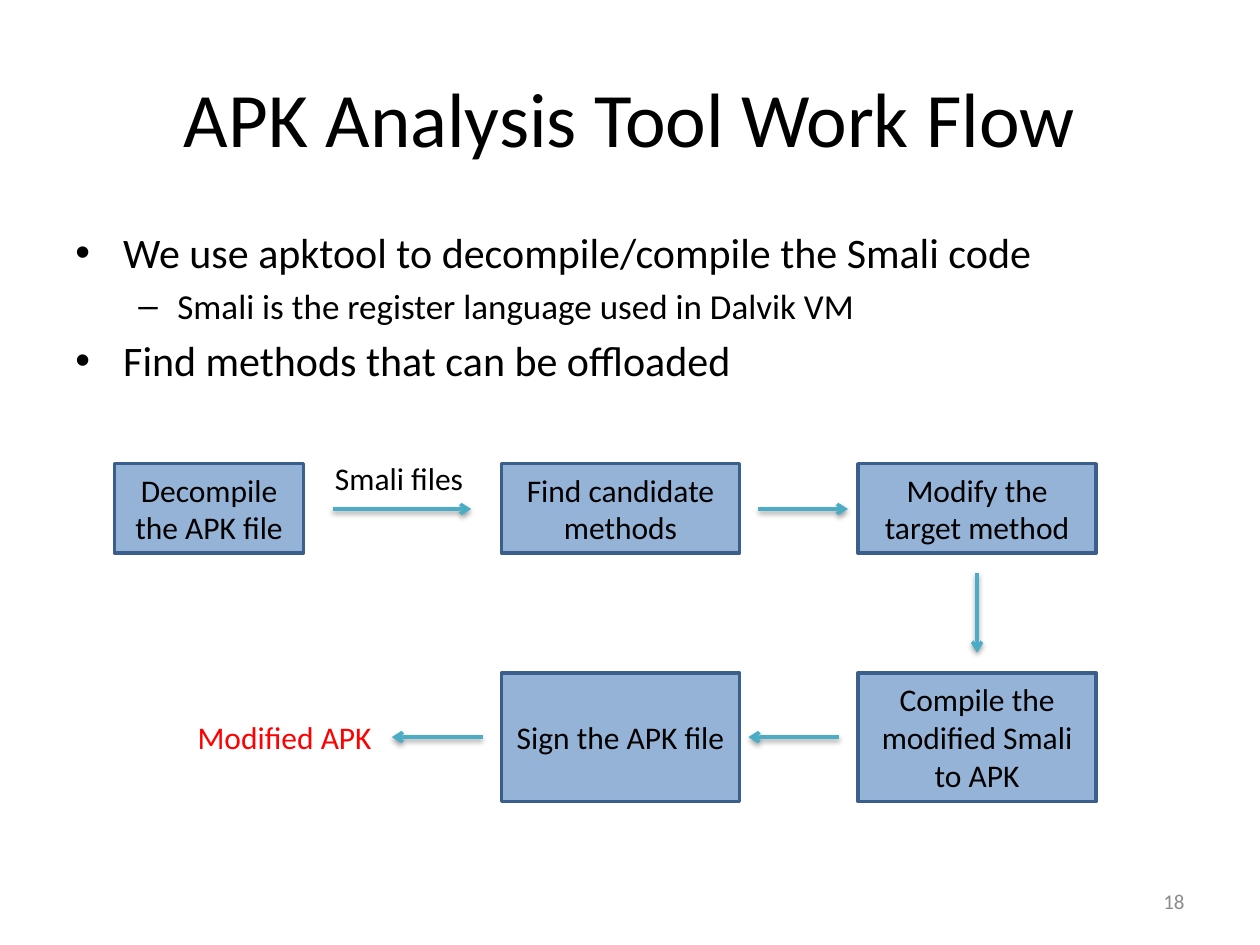
from dataclasses import dataclass

from lxml import etree
from pptx import Presentation
from pptx.dml.color import RGBColor
from pptx.enum.shapes import MSO_CONNECTOR, MSO_SHAPE
from pptx.enum.text import MSO_ANCHOR, PP_ALIGN
from pptx.oxml import parse_xml
from pptx.oxml.ns import nsdecls, qn
from pptx.util import Inches, Pt

RECTANGLE = MSO_SHAPE.RECTANGLE
STRAIGHT = MSO_CONNECTOR.STRAIGHT
MIDDLE, TOP = MSO_ANCHOR.MIDDLE, MSO_ANCHOR.TOP
LEFT, CENTER, RIGHT = PP_ALIGN.LEFT, PP_ALIGN.CENTER, PP_ALIGN.RIGHT


@dataclass(frozen=True)
class Theme:
    font: str = "Calibri"
    ink: str = "000000"
    result: str = "FF0000"
    muted: str = "8C8C8C"
    step_fill: str = "95B3D7"
    step_line: str = "3A5F8C"
    arrow: str = "4BACC6"
    title: int = 44
    point: int = 24
    subpoint: int = 20
    step: int = 18
    page: int = 12
    line: int = 2


theme = Theme()


def style_text(frame, size, color, align, anchor):
    frame.word_wrap = True
    frame.vertical_anchor = anchor
    for paragraph in frame.paragraphs:
        paragraph.alignment = align
        for run in paragraph.runs:
            run.font.name = theme.font
            run.font.size = Pt(size)
            run.font.color.rgb = RGBColor.from_string(color)


prs = Presentation()
prs.slide_width, prs.slide_height = Inches(10), Inches(7.5)
slide = prs.slides.add_slide(prs.slide_layouts[5])

title = slide.shapes.title
title.left, title.top = Inches(0.5), Inches(0.3)
title.width, title.height = Inches(9), Inches(1.25)
title.text_frame.text = "APK Analysis Tool Work Flow"
style_text(title.text_frame, theme.title, theme.ink, CENTER, MIDDLE)

points = [
    ("We use apktool to decompile/compile the Smali code", 0),
    ("Smali is the register language used in Dalvik VM", 1),
    ("Find methods that can be offloaded", 0),
]
levels = [("•", 0.38, 0.38, theme.point), ("–", 0.81, 0.31, theme.subpoint)]
overview = slide.shapes.add_textbox(Inches(0.5), Inches(1.75), Inches(9), Inches(1.6)).text_frame
overview.text = "\n".join(wording for wording, level in points)
style_text(overview, theme.point, theme.ink, LEFT, TOP)
for paragraph, (wording, level) in zip(overview.paragraphs, points):
    bullet, margin, hanging, size = levels[level]
    paragraph.level = level
    paragraph.runs[0].font.size = Pt(size)
    properties = paragraph._p.get_or_add_pPr()
    properties.set("marL", str(Inches(margin)))
    properties.set("indent", str(-Inches(hanging)))
    spacing = etree.SubElement(properties, qn("a:spcBef"))
    etree.SubElement(spacing, qn("a:spcPct"), val="20000")
    etree.SubElement(properties, qn("a:buFont"), typeface="Arial")
    etree.SubElement(properties, qn("a:buChar"), char=bullet)

middle_column, right_column, step_width = 3.98, 6.81, 1.89
upper_row, lower_row = (3.68, 0.71), (5.34, 1.02)
steps = [
    ("Decompile the APK file", 0.91, 1.5, upper_row),
    ("Find candidate methods", middle_column, step_width, upper_row),
    ("Modify the target method", right_column, step_width, upper_row),
    ("Compile the modified Smali to APK", right_column, step_width, lower_row),
    ("Sign the APK file", middle_column, step_width, lower_row),
]
for wording, left, width, (top, height) in steps:
    step = slide.shapes.add_shape(RECTANGLE, Inches(left), Inches(top), Inches(width), Inches(height))
    step.shadow.inherit = False
    step.fill.solid()
    step.fill.fore_color.rgb = RGBColor.from_string(theme.step_fill)
    step.line.color.rgb = RGBColor.from_string(theme.step_line)
    step.line.width = Pt(theme.line)
    step.text_frame.text = wording
    style_text(step.text_frame, theme.step, theme.ink, CENTER, MIDDLE)

upper_middle, lower_middle = 4.04, 5.85
right_center = right_column + step_width / 2
flows = [
    (2.64, upper_middle, 3.74, upper_middle),
    (6.02, upper_middle, 6.73, upper_middle),
    (right_center, 4.55, right_center, 5.18),
    (6.66, lower_middle, 5.94, lower_middle),
    (3.83, lower_middle, 3.11, lower_middle),
]
for ends in flows:
    flow = slide.shapes.add_connector(STRAIGHT, *[Inches(end) for end in ends])
    flow.line.color.rgb = RGBColor.from_string(theme.arrow)
    flow.line.width = Pt(theme.line)
    etree.SubElement(flow.line._ln, qn("a:tailEnd"), type="arrow")
    flow._element.spPr.append(parse_xml(
        f'<a:effectLst {nsdecls("a")}>'
        f'<a:outerShdw blurRad="{Pt(3.1)}" dist="{Pt(1.6)}" dir="5400000" rotWithShape="0">'
        f'<a:srgbClr val="{theme.ink}"><a:alpha val="38000"/></a:srgbClr>'
        '</a:outerShdw></a:effectLst>'
    ))

labels = [
    ("Smali files", 2.56, 3.59, 1.31, theme.step, theme.ink, LEFT, TOP),
    ("Modified APK", 1.47, 5.65, 1.64, theme.step, theme.result, LEFT, TOP),
    ("18", 7.17, 6.95, 2.33, theme.page, theme.muted, RIGHT, MIDDLE),
]
for wording, left, top, width, size, color, align, anchor in labels:
    label = slide.shapes.add_textbox(Inches(left), Inches(top), Inches(width), Inches(0.4))
    label.text_frame.text = wording
    style_text(label.text_frame, size, color, align, anchor)

prs.save("out.pptx")
